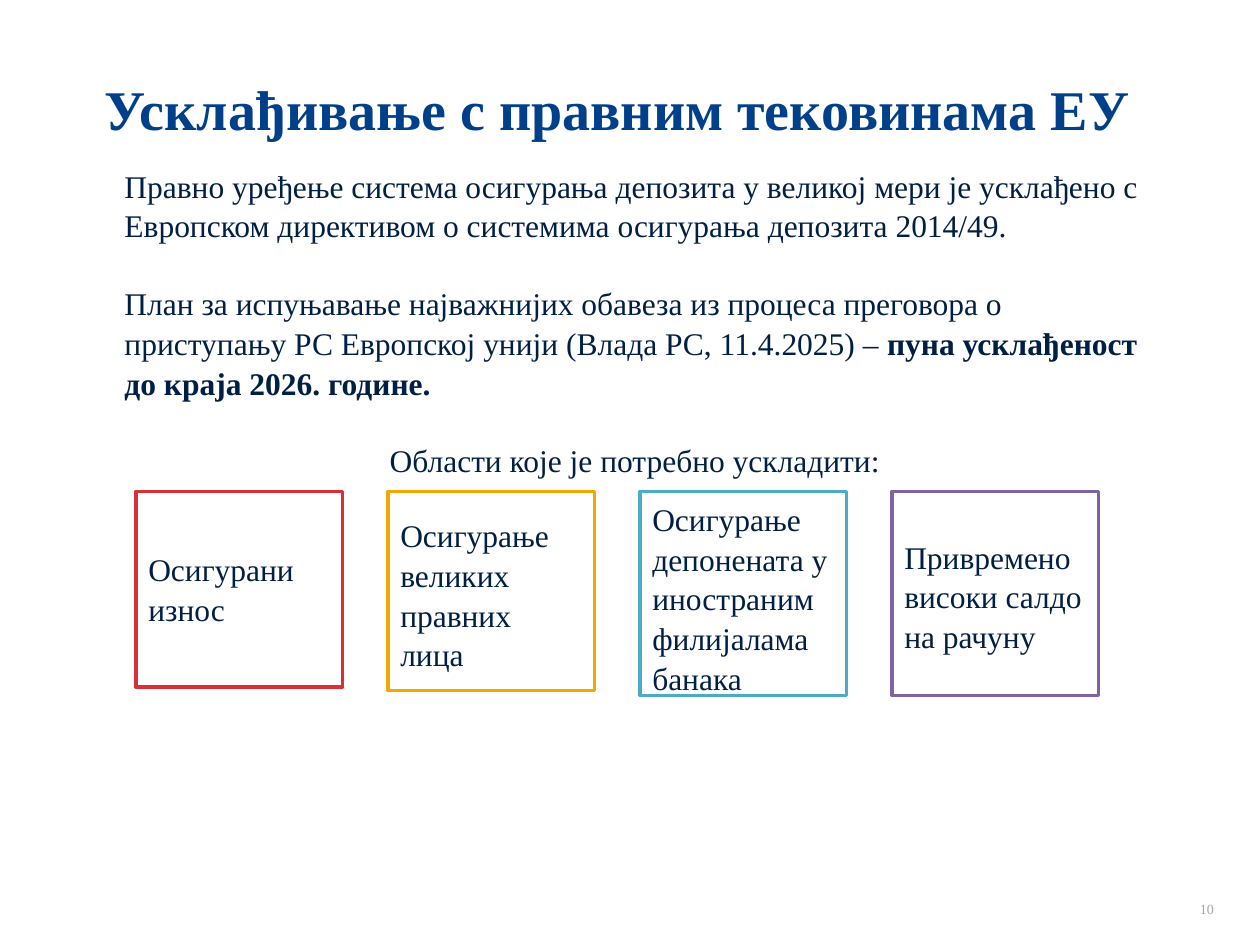
from pptx import Presentation
from pptx.dml.color import RGBColor
from pptx.enum.shapes import MSO_SHAPE
from pptx.enum.text import MSO_ANCHOR, PP_ALIGN
from pptx.util import Cm, Pt

# Content
TITLE = "Усклађивање с правним тековинама ЕУ"
PAGE_NUMBER = "10"
INTRODUCTION = [  # alignment, runs of (text, bold)
    (PP_ALIGN.LEFT, [
        ("Правно уређење система осигурања депозита у великој мери је усклађено с "
         "Европском директивом о системима осигурања депозита 2014/49.", False)]),
    (PP_ALIGN.LEFT, [
        ("План за испуњавање најважнијих обавеза из процеса преговора о приступању "
         "РС Европској унији (Влада РС, 11.4.2025) – ", False),
        ("пуна усклађеност до краја 2026. године.", True)]),
    (PP_ALIGN.CENTER, [("Области које је потребно ускладити:", False)]),
]
AREAS = [  # text, line colour, height and top inset in cm
    ("Осигурани износ", "D83036", 3.94, 1.14),
    ("Осигурање великих правних лица", "F1A800", 4.01, 0.46),
    ("Осигурање депонената у иностраним филијалама банака", "4BACC6", 4.11, 0.13),
    ("Привремено високи салдо на рачуну", "8064A2", 4.11, 0.89),
]

# Style
FONT = "Times New Roman"
NAVY, BLUE, GREY, WHITE = "001F45", "003F8A", "A6A6A6", "FFFFFF"
LINE_SPACING = 1.05
PARAGRAPH_GAP = Pt(21.7)
AREA_LEFT, AREA_TOP, AREA_WIDTH, AREA_STEP = 2.74, 9.91, 4.17, 5.08


def colour(value):
    return RGBColor.from_string(value)


def add_span(para, text, size=18, shade=NAVY, bold=False):
    span = para.add_run()
    span.text = text
    span.font.name = FONT
    span.font.size = Pt(size)
    span.font.bold = bold
    span.font.color.rgb = colour(shade)


def place(shape, left, top, width, height):
    shape.left, shape.top = Cm(left), Cm(top)
    shape.width, shape.height = Cm(width), Cm(height)


def add_text_box(page, left, top, width, height):
    box = page.shapes.add_textbox(Cm(left), Cm(top), Cm(width), Cm(height))
    box.text_frame.word_wrap = True
    return box.text_frame


def add_title(page):
    title = page.shapes.title
    place(title, 1.27, 1.27, 22.35, 1.8)
    frame = title.text_frame
    frame.margin_left = frame.margin_right = Cm(0.51)
    frame.vertical_anchor = MSO_ANCHOR.MIDDLE
    para = frame.paragraphs[0]
    para.alignment = PP_ALIGN.CENTER
    add_span(para, TITLE, 32, BLUE, True)


def add_introduction(page):
    frame = add_text_box(page, 2.26, 3.2, 21.08, 6.4)
    for index, (alignment, spans) in enumerate(INTRODUCTION):
        para = frame.add_paragraph() if index else frame.paragraphs[0]
        para.alignment = alignment
        para.line_spacing = LINE_SPACING
        if index:
            para.space_before = PARAGRAPH_GAP
        for text, bold in spans:
            add_span(para, text, bold=bold)


def add_area(page, index, text, line_colour, height, inset):
    box = page.shapes.add_shape(
        MSO_SHAPE.RECTANGLE, Cm(AREA_LEFT + index * AREA_STEP), Cm(AREA_TOP),
        Cm(AREA_WIDTH), Cm(height))
    box.shadow.inherit = False
    box.fill.solid()
    box.fill.fore_color.rgb = colour(WHITE)
    box.line.color.rgb = colour(line_colour)
    box.line.width = Pt(2)
    frame = box.text_frame
    frame.word_wrap = True
    frame.vertical_anchor = MSO_ANCHOR.TOP
    frame.margin_top = Cm(inset)
    para = frame.paragraphs[0]
    para.alignment = PP_ALIGN.LEFT
    para.line_spacing = LINE_SPACING
    add_span(para, text)


def add_page_number(page):
    frame = add_text_box(page, 18.8, 17.6, 5.92, 1.02)
    frame.vertical_anchor = MSO_ANCHOR.BOTTOM
    para = frame.paragraphs[0]
    para.alignment = PP_ALIGN.RIGHT
    add_span(para, PAGE_NUMBER, 8, GREY)


def main():
    deck = Presentation()
    deck.slide_width, deck.slide_height = Cm(25.4), Cm(19.05)
    page = deck.slides.add_slide(deck.slide_layouts.get_by_name("Title Only"))
    add_title(page)
    add_page_number(page)
    add_introduction(page)
    for index, area in enumerate(AREAS):
        add_area(page, index, *area)
    deck.save("out.pptx")


if __name__ == "__main__":
    main()
